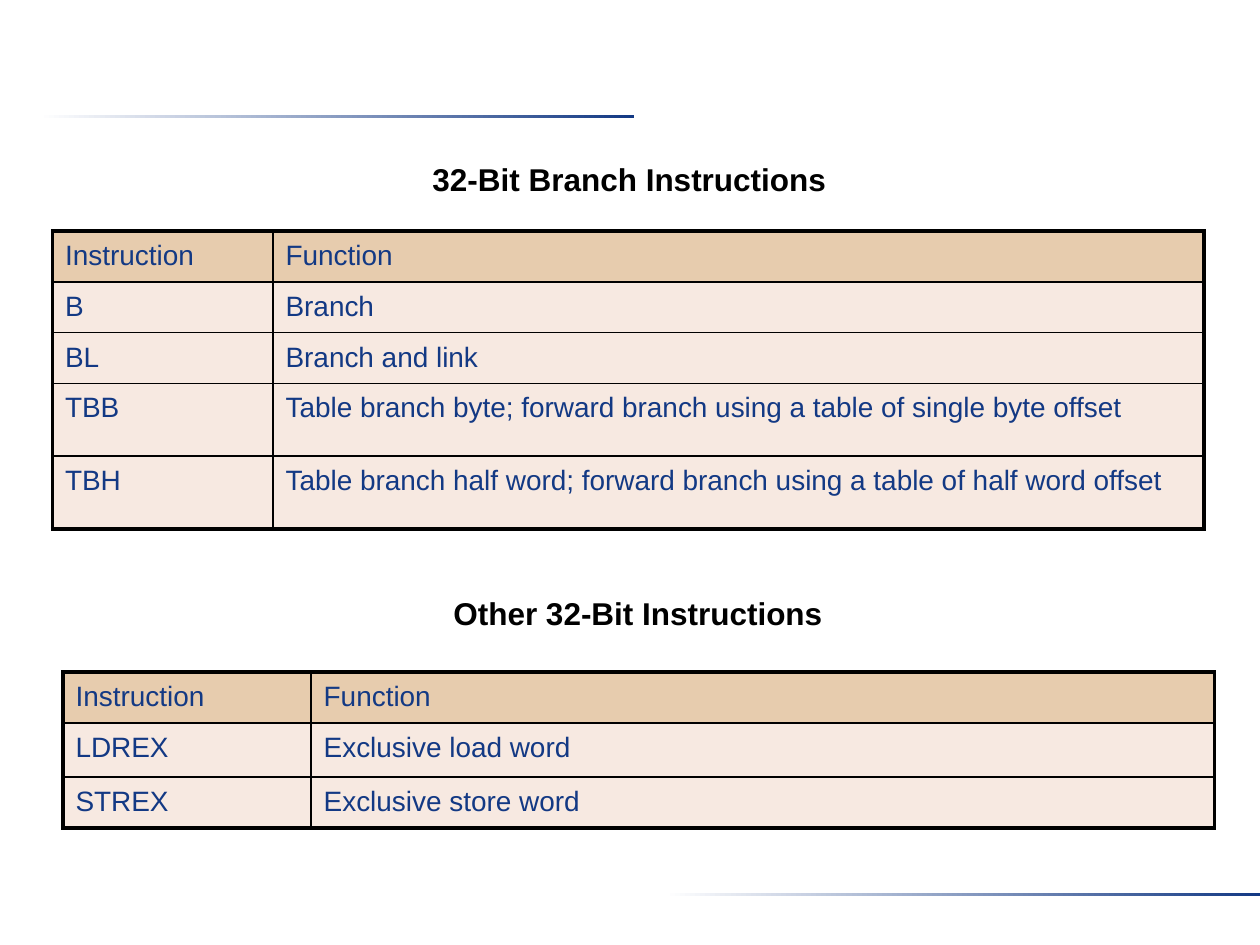
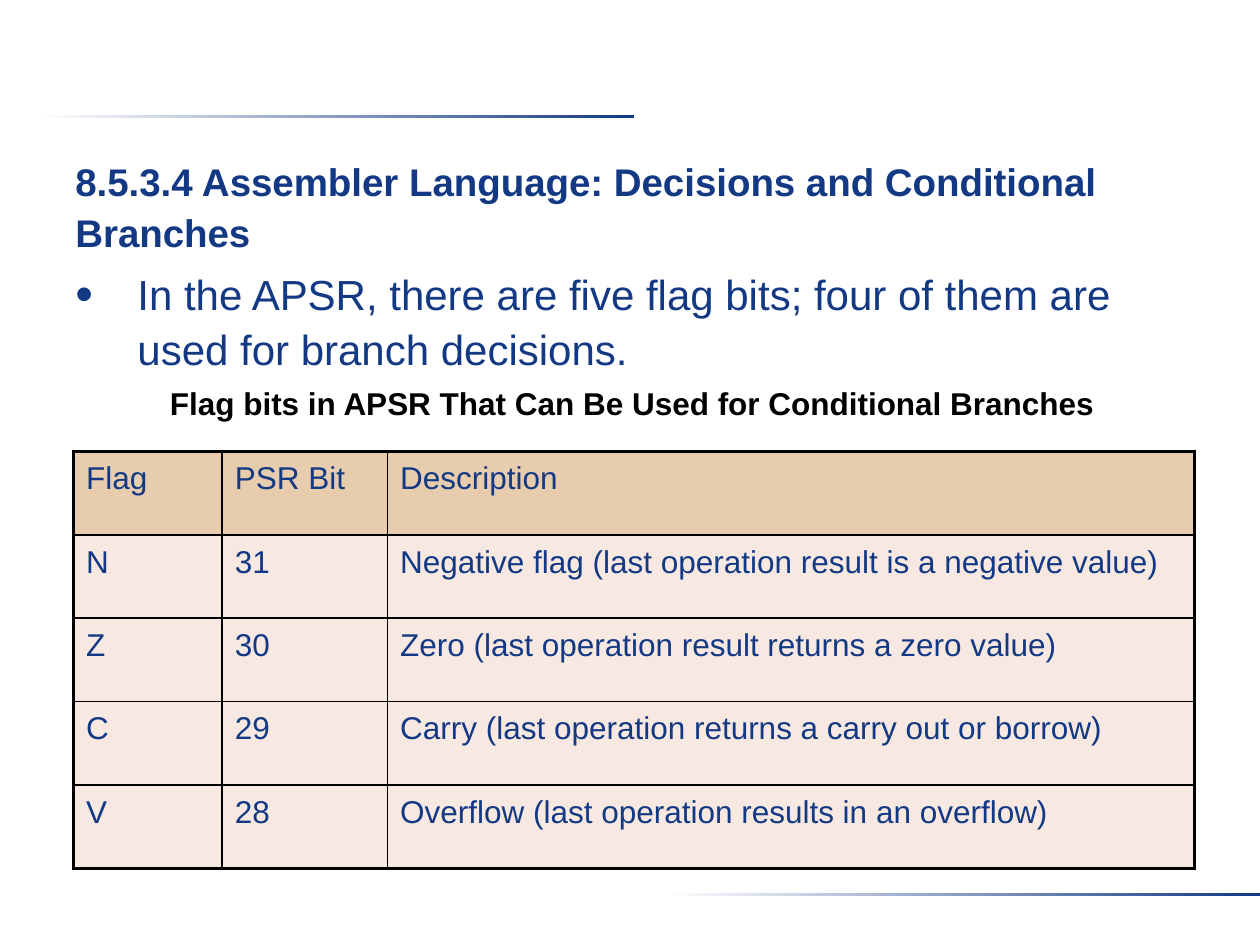
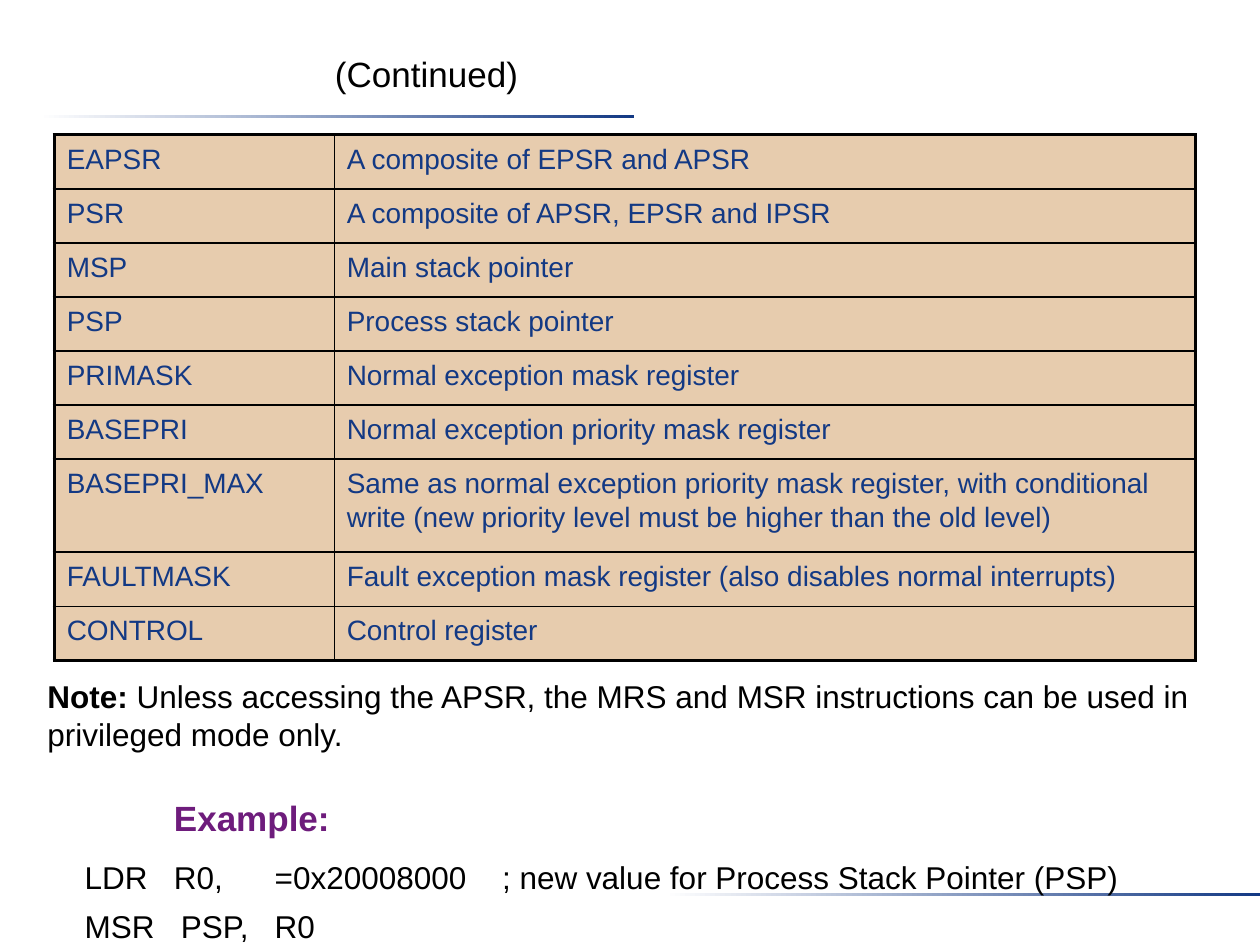
from lxml import etree
from pptx import Presentation
from pptx.dml.color import RGBColor
from pptx.enum import shapes, text as t
from pptx.oxml.ns import qn
from pptx.util import Pt

FONT = "Arial"
NAVY, BLACK, WHITE, PURPLE = "133984", "000000", "FFFFFF", "6E1C7C"
TAN, BLUSH = "D09A5E", "F1D5C5"
THIN, THICK = 1, 2.25


def rgb(value):
    return RGBColor.from_string(value)


def add_run(p, text, size, color=BLACK, bold=False):
    r = p.add_run()
    r.text = text
    r.font.name, r.font.size, r.font.bold = FONT, Pt(size), bold
    r.font.color.rgb = rgb(color)


def add_box(slide, x, y, w, h):
    tf = slide.shapes.add_textbox(Pt(x), Pt(y), Pt(w), Pt(h)).text_frame
    tf.word_wrap = True
    return tf


# One-line caption whose box grows with its text
def add_caption(slide, x, y, w, h, text, size=18, bold=True):
    tf = add_box(slide, x, y, w, h)
    tf.word_wrap = False
    tf.auto_size = t.MSO_AUTO_SIZE.SHAPE_TO_FIT_TEXT
    add_run(tf.paragraphs[0], text, size, bold=bold)
    return tf


# Fading bands under the title and above the footer
def add_bands(slide):
    for x, y in ((22.3, 65.7), (380, 510)):
        sp = slide.shapes.add_shape(shapes.MSO_SHAPE.RECTANGLE, Pt(x), Pt(y), Pt(340), Pt(2))
        sp.shadow.inherit = False
        sp.line.fill.background()
        sp.fill.gradient()
        sp.fill.gradient_angle = 0
        for stop, color, position in zip(sp.fill.gradient_stops, (WHITE, NAVY), (0, 1)):
            stop.color.rgb = rgb(color)
            stop.position = position


# Half-transparent fill and black borders of one cell
def style_cell(cell, color, widths):
    cell.fill.solid()
    cell.fill.fore_color.rgb = rgb(color)
    tc_pr = cell._tc.get_or_add_tcPr()
    etree.SubElement(tc_pr.find(".//" + qn("a:srgbClr")), qn("a:alpha"), val="50000")
    for i, (side, width) in enumerate(zip("LRTB", widths)):
        ln = etree.Element(qn("a:ln" + side), w=str(Pt(width)))
        fill = etree.SubElement(ln, qn("a:solidFill"))
        etree.SubElement(fill, qn("a:srgbClr"), val=BLACK)
        tc_pr.insert(i, ln)


# Table with a thick frame; the first header_rows rows are tan
def add_grid(slide, x, y, cols, heights, rows, size=16, header_rows=1):
    frame = slide.shapes.add_table(len(rows), len(cols), Pt(x), Pt(y),
                                   Pt(sum(cols)), Pt(sum(heights)))
    table = frame.table
    table.first_row = table.horz_banding = False
    for col, width in zip(table.columns, cols):
        col.width = Pt(width)
    for i, (height, values) in enumerate(zip(heights, rows)):
        table.rows[i].height = Pt(height)
        for j, value in enumerate(values):
            cell = table.cell(i, j)
            outer = (j == 0, j == len(cols) - 1, i == 0, i == len(rows) - 1)
            style_cell(cell, TAN if i < header_rows else BLUSH,
                       [THICK if edge else THIN for edge in outer])
            p = cell.text_frame.paragraphs[0]
            p.line_spacing = 1.1
            add_run(p, value, size, NAVY)


def branch_slide(slide):
    tf = add_caption(slide, 240, 90.3, 250.6, 25.2, "32-Bit Branch Instructions")
    tf.paragraphs[0].line_spacing = 0.9
    add_grid(slide, 30, 132, (126, 532), (29,) * 3 + (41.6,) * 2, (
        ("Instruction", "Function"),
        ("B", "Branch"),
        ("BL", "Branch and link"),
        ("TBB", "Table branch byte; forward branch using a table of single byte offset"),
        ("TBH", "Table branch half word; forward branch using a table of half word offset")))
    add_caption(slide, 252, 336, 225.4, 29, "Other 32-Bit Instructions")
    add_grid(slide, 36, 384, (141.8, 516.2), (29.2, 30.8, 29.2), (
        ("Instruction", "Function"),
        ("LDREX", "Exclusive load word"),
        ("STREX", "Exclusive store word")))


def flags_slide(slide):
    # Heading and bullet
    tf = add_box(slide, 36, 84.2, 648, 126)
    p = tf.paragraphs[0]
    p.line_spacing = 1.1
    add_run(p, "8.5.3.4 Assembler Language: Decisions and Conditional Branches", 22, NAVY, True)
    p = tf.add_paragraph()
    p.line_spacing, p.space_before = 1.1, Pt(4.8)
    p_pr = p._p.get_or_add_pPr()
    p_pr.set("marL", str(Pt(35.5)))
    p_pr.set("indent", str(-Pt(35.5)))
    etree.SubElement(p_pr, qn("a:buSzPct"), val="120000")
    etree.SubElement(p_pr, qn("a:buFont"), typeface=FONT)
    etree.SubElement(p_pr, qn("a:buChar"), char="•")
    add_run(p, "In the APSR, there are five flag bits; four of them are used for "
               "branch decisions.", 24, NAVY)

    # Flag table
    add_caption(slide, 90, 216, 543.6, 29,
                "Flag bits in APSR That Can Be Used for Conditional Branches")
    add_grid(slide, 42, 258, (85, 94.5, 461), (47.65,) * 5, (
        ("Flag", "PSR Bit", "Description"),
        ("N", "31", "Negative flag (last operation result is a negative value)"),
        ("Z", "30", "Zero (last operation result returns a zero value)"),
        ("C", "29", "Carry (last operation returns a carry out or borrow)"),
        ("V", "28", "Overflow (last operation results in an overflow)")), size=18)


# Assembler example; the operands sit on tab stops
def add_example(slide, x, y, w, h):
    tf = add_box(slide, x, y, w, h)
    lines = (
        ("Example:", 20, PURPLE, 0, ()),
        ("LDR\tR0,\t=0x20008000\t; new value for Process Stack Pointer (PSP)",
         18, BLACK, 9, (51, 108.6, 238.5)),
        ("MSR\tPSP,\tR0", 18, BLACK, 4, (55, 108.6)))
    for i, (text, size, color, before, stops) in enumerate(lines):
        p = tf.add_paragraph() if i else tf.paragraphs[0]
        p.line_spacing, p.space_before = 1.1, Pt(before)
        p_pr = p._p.get_or_add_pPr()
        if stops:
            tabs = etree.SubElement(p_pr, qn("a:tabLst"))
            for stop in stops:
                etree.SubElement(tabs, qn("a:tab"), pos=str(Pt(stop)), algn="l")
        else:
            p_pr.set("marL", str(Pt(51)))
        add_run(p, text, size, color, bold=not stops)


def registers_slide(slide):
    add_caption(slide, 184.3, 26.2, 120, 31, "(Continued)", 20, bold=False)
    rows = (
        ("EAPSR", "A composite of EPSR and APSR"),
        ("PSR", "A composite of APSR, EPSR and IPSR"),
        ("MSP", "Main stack pointer"),
        ("PSP", "Process stack pointer"),
        ("PRIMASK", "Normal exception mask register"),
        ("BASEPRI", "Normal exception priority mask register"),
        ("BASEPRI_MAX", "Same as normal exception priority mask register, with conditional "
                        "write (new priority level must be higher than the old level)"),
        ("FAULTMASK", "Fault exception mask register (also disables normal interrupts)"),
        ("CONTROL", "Control register"))
    heights = [53.2 if name == "BASEPRI_MAX" else 30.9 for name, _ in rows]
    add_grid(slide, 31, 77, (160, 492), heights, rows, header_rows=len(rows))
    p = add_box(slide, 20, 383.3, 674.6, 51).paragraphs[0]
    add_run(p, "Note: ", 18, bold=True)
    add_run(p, "Unless accessing the APSR, the MRS and MSR instructions can be used in "
               "privileged mode only.", 18)
    add_example(slide, 41.3, 449.3, 638, 90.7)


def main():
    prs = Presentation()
    prs.slide_width, prs.slide_height = Pt(720), Pt(540)
    for build in (branch_slide, flags_slide, registers_slide):
        slide = prs.slides.add_slide(prs.slide_layouts[6])
        add_bands(slide)
        build(slide)
    prs.save("out.pptx")


if __name__ == "__main__":
    main()
